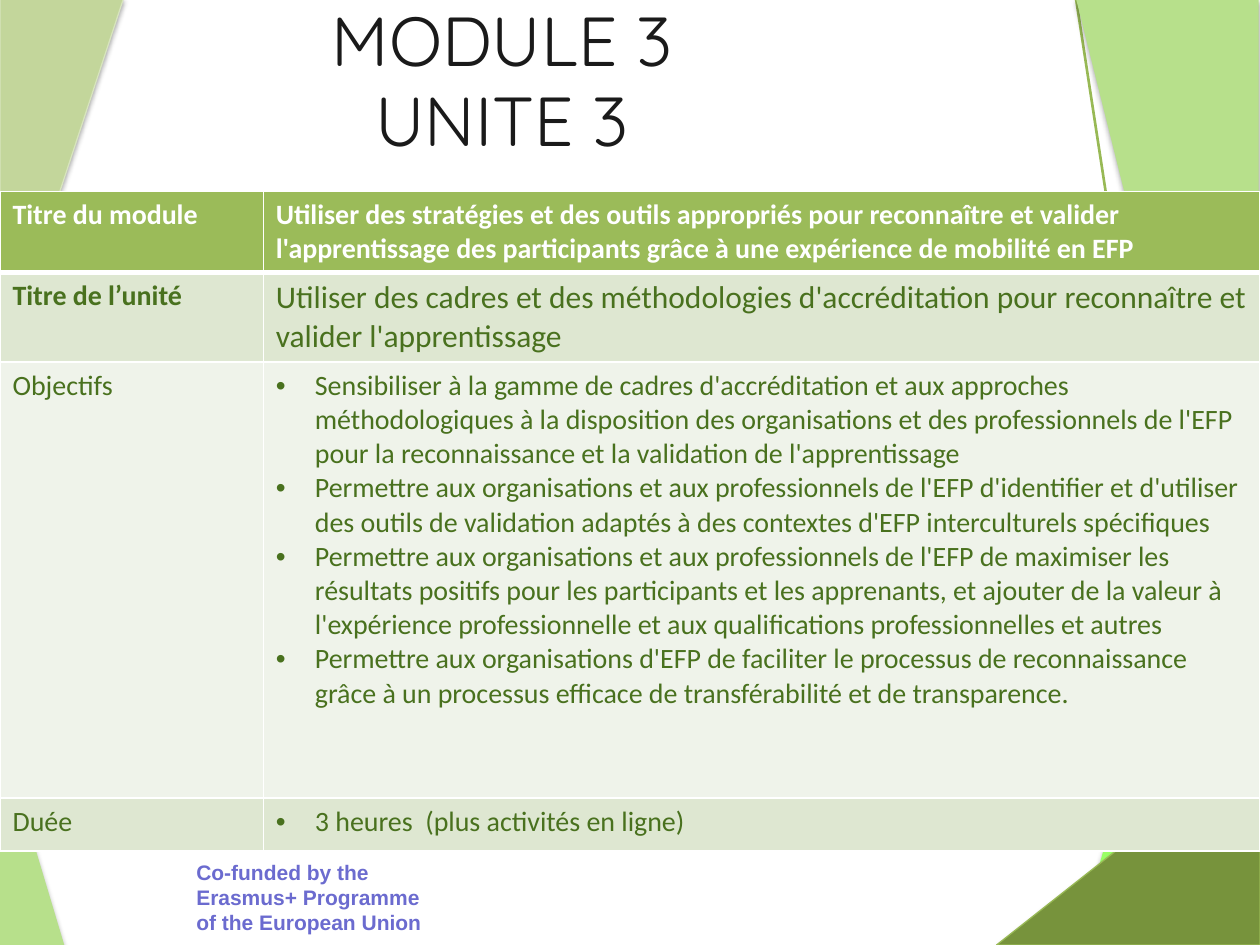
from lxml.etree import SubElement
from pptx import Presentation
from pptx.dml.color import RGBColor
from pptx.enum.shapes import MSO_CONNECTOR, MSO_SHAPE
from pptx.enum.text import MSO_ANCHOR, MSO_AUTO_SIZE, PP_ALIGN
from pptx.oxml.ns import qn
from pptx.util import Inches, Pt

COLOURS = {
    "white": "FFFFFF", "black": "000000", "title": "1A1A1A", "text": "49711E",
    "funding": "6B6BCF", "header": "9BBB59", "band": "DEE7D1", "plain": "EFF3EA",
    "bright": "99FF66", "light": "B7E08B", "pale": "C3D69B", "edge": "D7E4BD",
    "olive": "77933C", "line": "98B955",
}

# left, top, width, height, flips, fill, outline
LOWER_TRIANGLES = [
    (8.54, 2.41, 1.48, 5.09, "H", "bright", None),
    (0, 5.8, 0.51, 1.7, "", "light", None),
    (0, -0.01, 0.98, 2.97, "V", "pale", "edge"),
]
UPPER_TRIANGLES = [
    (8.54, -0.01, 1.45, 5.8, "HV", "light", None),
    (7.91, 5.85, 2.09, 1.65, "H", "olive", "line"),
]
LINES = [(8.96, 7.5, 9.3, 2.1), (9.65, 7.21, 8.54, -0.01)]

COLUMN_WIDTHS = [2.09, 7.91]
HEADER = {"size": 16, "bold": True, "colour": "white"}
LABEL = {"size": 16, "bold": True, "colour": "text"}
BODY = {"size": 16, "bold": False, "colour": "text"}
UNIT = {"size": 18, "bold": False, "colour": "text"}

# height, fill, label, label format, paragraphs, paragraph format, bulleted
ROWS = [
    (0.64, "header", "Titre du module", HEADER,
     ["Utiliser des stratégies et des outils appropriés pour reconnaître et valider "
      "l'apprentissage des participants grâce à une expérience de mobilité en EFP"],
     HEADER, False),
    (0.71, "band", "Titre de l’unité", LABEL,
     ["Utiliser des cadres et des méthodologies d'accréditation pour reconnaître et "
      "valider l'apprentissage"], UNIT, False),
    (3.46, "plain", "Objectifs", BODY,
     ["Sensibiliser à la gamme de cadres d'accréditation et aux approches "
      "méthodologiques à la disposition des organisations et des professionnels de "
      "l'EFP pour la reconnaissance et la validation de l'apprentissage",
      "Permettre aux organisations et aux professionnels de l'EFP d'identifier et "
      "d'utiliser des outils de validation adaptés à des contextes d'EFP "
      "interculturels spécifiques",
      "Permettre aux organisations et aux professionnels de l'EFP de maximiser les "
      "résultats positifs pour les participants et les apprenants, et ajouter de la "
      "valeur à l'expérience professionnelle et aux qualifications professionnelles "
      "et autres",
      "Permettre aux organisations d'EFP de faciliter le processus de reconnaissance "
      "grâce à un processus efficace de transférabilité et de transparence."],
     BODY, True),
    (0.42, "band", "Duée", BODY, ["3 heures  (plus activités en ligne)"], BODY, True),
]


def colour(name):
    return RGBColor.from_string(COLOURS[name])


def format_font(font, size, colour, name="Calibri", bold=False):
    for attribute, value in {"name": name, "size": Pt(size), "bold": bold}.items():
        setattr(font, attribute, value)
    font.color.rgb = RGBColor.from_string(COLOURS[colour])


def add_shadow(shape, opacity):
    shape.shadow.inherit = False
    effects = shape._element.spPr.find(qn("a:effectLst"))
    shadow = SubElement(effects, qn("a:outerShdw"), blurRad=str(Pt(3.1)),
                        dist=str(Pt(1.8)), dir="5400000", rotWithShape="0")
    tint = SubElement(shadow, qn("a:srgbClr"), val=COLOURS["black"])
    SubElement(tint, qn("a:alpha"), val=str(opacity * 1000))


def add_triangle(page, left, top, width, height, flips, fill, outline):
    triangle = page.shapes.add_shape(
        MSO_SHAPE.RIGHT_TRIANGLE, Inches(left), Inches(top), Inches(width), Inches(height))
    for axis in flips:
        triangle._element.spPr.xfrm.set("flip" + axis, "1")
    triangle.fill.solid()
    triangle.fill.fore_color.rgb = colour(fill)
    if outline:
        triangle.line.color.rgb = colour(outline)
        triangle.line.width = Pt(0.75)
    else:
        triangle.line.fill.background()
    add_shadow(triangle, 38 if fill == "bright" else 35)


def add_line(page, *ends):
    line = page.shapes.add_connector(MSO_CONNECTOR.STRAIGHT, *map(Inches, ends))
    line.line.color.rgb = colour("line")
    line.line.width = Pt(1.5)
    SubElement(line._element.spPr, qn("a:effectLst"))


def add_funding_note(page):
    box = page.shapes.add_textbox(Inches(1.46), Inches(6.77), Inches(2), Inches(0.71))
    box.text_frame.word_wrap = True
    span = box.text_frame.paragraphs[0].add_run()
    span.text = "Co-funded by the Erasmus+ Programme of the European Union"
    format_font(span.font, 12, "funding", "Arial", True)


def fill_title(page):
    title = page.shapes.title
    place = {"left": 0.75, "top": 0.03, "width": 6.47, "height": 1.25}
    for attribute, value in place.items():
        setattr(title, attribute, Inches(value))
    frame = title.text_frame
    frame.auto_size = MSO_AUTO_SIZE.NONE
    frame.vertical_anchor = MSO_ANCHOR.MIDDLE
    para = frame.paragraphs[0]
    para.text = "MODULE 3\vUNITE 3"
    para.alignment = PP_ALIGN.CENTER
    para.line_spacing = 0.96
    for span in para.runs:
        format_font(span.font, 39.6, "title", "Quicksand")
    # The title stands in front of the decoration
    page.shapes._spTree.append(title._element)


def add_bullet(para):
    properties = para._p.get_or_add_pPr()
    properties.set("marL", str(Inches(0.31)))
    properties.set("indent", str(-Inches(0.31)))
    SubElement(properties, qn("a:buFont"), typeface="Arial")
    SubElement(properties, qn("a:buChar"), char="•")


def add_borders(cell, bottom):
    properties = cell._tc.get_or_add_tcPr()
    for side, width in {"L": 1, "R": 1, "T": 1, "B": bottom}.items():
        edge = SubElement(properties, qn("a:ln" + side), w=str(Pt(width)))
        paint = SubElement(edge, qn("a:solidFill"))
        SubElement(paint, qn("a:srgbClr"), val=COLOURS["white"])


def fill_cell(cell, texts, style, fill, bulleted=False):
    add_borders(cell, 3 if fill == "header" else 1)
    cell.fill.solid()
    cell.fill.fore_color.rgb = colour(fill)
    frame = cell.text_frame
    for index, text in enumerate(texts):
        para = frame.add_paragraph() if index else frame.paragraphs[0]
        if bulleted:
            add_bullet(para)
        span = para.add_run()
        span.text = text
        format_font(span.font, **style)


def add_module_table(page):
    height = sum(row[0] for row in ROWS)
    table = page.shapes.add_table(len(ROWS), len(COLUMN_WIDTHS), 0, Inches(1.52),
                                  Inches(10), Inches(height)).table
    for column, width in zip(table.columns, COLUMN_WIDTHS):
        column.width = Inches(width)
    for row, content in zip(table.rows, ROWS):
        height, fill, label, label_style, texts, style, bulleted = content
        row.height = Inches(height)
        fill_cell(row.cells[0], [label], label_style, fill)
        fill_cell(row.cells[1], texts, style, fill, bulleted)


def main():
    deck = Presentation()
    deck.slide_width, deck.slide_height = Inches(10), Inches(7.5)
    page = deck.slides.add_slide(deck.slide_layouts[5])
    add_triangle(page, *LOWER_TRIANGLES[0])
    add_funding_note(page)
    for triangle in LOWER_TRIANGLES[1:]:
        add_triangle(page, *triangle)
    for ends in LINES:
        add_line(page, *ends)
    for triangle in UPPER_TRIANGLES:
        add_triangle(page, *triangle)
    fill_title(page)
    add_module_table(page)
    deck.save("out.pptx")


if __name__ == "__main__":
    main()
